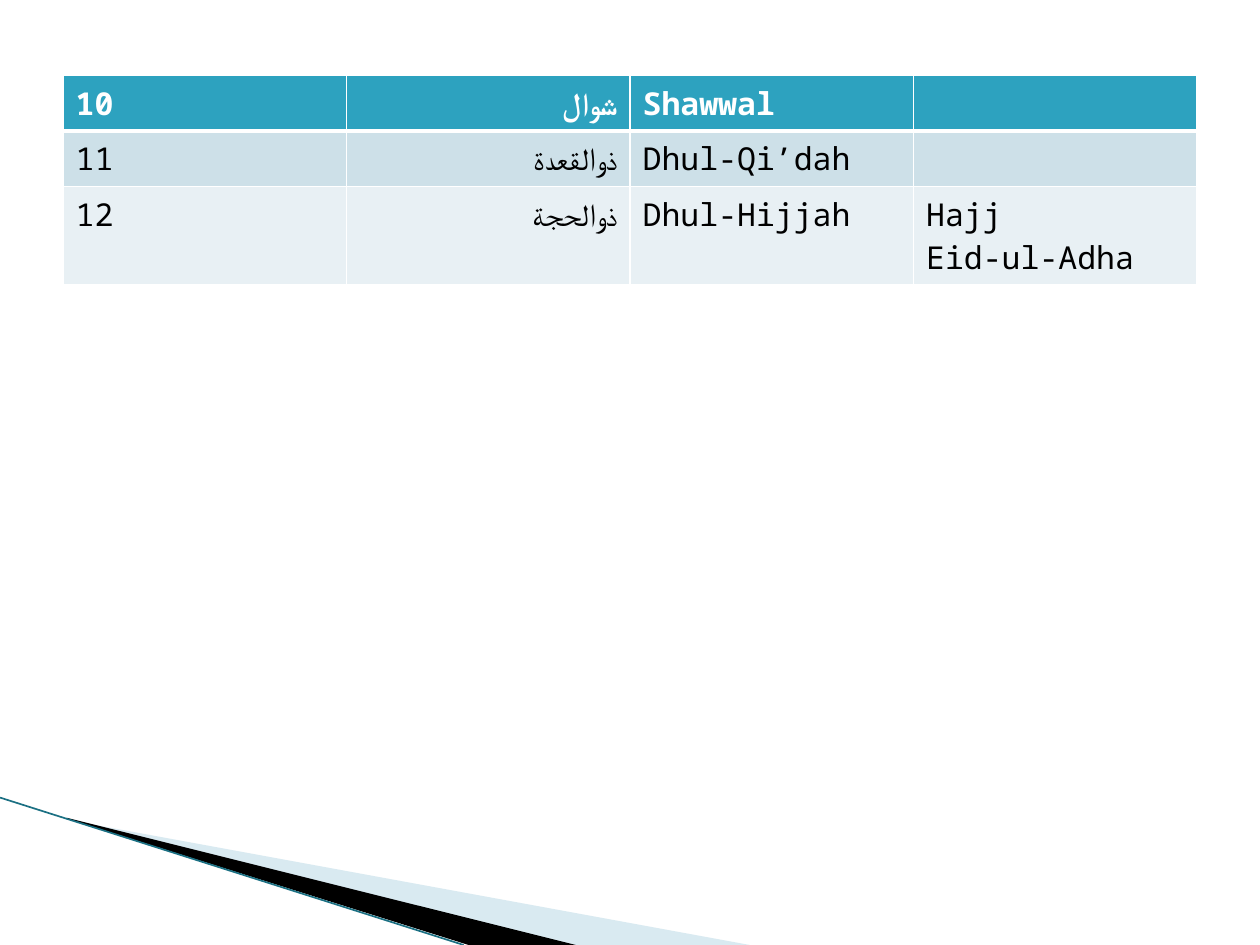
from dataclasses import dataclass

from pptx import Presentation, util as u
from pptx.dml.color import RGBColor
from pptx.enum import shapes, text
from pptx.oxml.ns import qn
from lxml import etree


@dataclass(frozen=True)
class Theme:
    font: str = "Noto Sans Mono"
    size: int = 18
    head: str = "2DA2BF"
    bands: tuple = ("CDE0E8", "E8F0F4")
    white: str = "FFFFFF"
    black: str = "000000"
    pale: str = "A0CBDC"
    edge: str = "1B7083"


T = Theme()
WIDE, HIGH = 10, 7.5
MONTHS = [
    ("10", "شوال", "Shawwal", ""),
    ("11", "ذوالقعدة", "Dhul-Qi’dah", ""),
    ("12", "ذوالحجة", "Dhul-Hijjah", "Hajj\nEid-ul-Adha"),
]
ARABIC = 1
WEDGES = [
    ([(0.55, 6.51), (5.95, 7.5), (4.56, 7.5), (0.55, 6.5)], T.pale, 40),
    ([(0.53, 6.49), (4.57, 7.5), (3.72, 7.5), (0.54, 6.5)], T.black, 100),
]
SLOPE = (0, 6.33, 3.68, 7.5)


def rgb(code):
    return RGBColor.from_string(code)


def add_wedge(slide, points, color, alpha):
    first, *rest = [(u.Inches(x), u.Inches(y)) for x, y in points]
    build = slide.shapes.build_freeform(*first)
    build.add_line_segments(rest, close=True)
    wedge = build.convert_to_shape()
    wedge.shadow.inherit = False
    wedge.line.fill.background()
    wedge.fill.solid()
    wedge.fill.fore_color.rgb = rgb(color)
    if alpha < 100:
        tint = wedge._element.spPr.find(".//" + qn("a:srgbClr"))
        etree.SubElement(tint, qn("a:alpha"), val=str(alpha * 1000))


def add_slope(slide):
    line = slide.shapes.add_connector(
        shapes.MSO_CONNECTOR.STRAIGHT, *map(u.Inches, SLOPE))
    line.line.color.rgb = rgb(T.edge)
    line.line.width = u.Pt(0.95)
    etree.SubElement(line._element.spPr, qn("a:effectLst"))


def set_edges(cell, base):
    props = cell._tc.get_or_add_tcPr()
    for side, width in zip("LRTB", (1, 1, 1, base)):
        edge = etree.SubElement(props, qn("a:ln" + side), w=str(u.Pt(width)))
        fill = etree.SubElement(edge, qn("a:solidFill"))
        etree.SubElement(fill, qn("a:srgbClr"), val=T.white)


def set_cell(cell, words, row, col):
    head = row == 0
    set_edges(cell, 3 if head else 1)
    cell.fill.solid()
    cell.fill.fore_color.rgb = rgb(T.head if head else T.bands[(row - 1) % 2])
    cell.text_frame.text = words
    for para in cell.text_frame.paragraphs:
        if col == ARABIC:
            para.alignment = text.PP_ALIGN.RIGHT
            para._p.get_or_add_pPr().set("rtl", "1")
        for run in para.runs:
            run.font.name = T.font
            run.font.size = u.Pt(T.size)
            run.font.bold = head
            run.font.color.rgb = rgb(T.white if head else T.black)
            etree.SubElement(run._r.get_or_add_rPr(), qn("a:cs"), typeface=T.font)


def add_months(slide):
    rows, cols = len(MONTHS), len(MONTHS[0])
    frame = slide.shapes.add_table(
        rows, cols, u.Inches(WIDE * 0.05), u.Inches(HIGH * 0.08),
        u.Inches(WIDE * 0.9), u.Inches(0.41 * rows))
    for row, month in enumerate(MONTHS):
        for col, words in enumerate(month):
            set_cell(frame.table.cell(row, col), words, row, col)


def main():
    deck = Presentation()
    deck.slide_width, deck.slide_height = u.Inches(WIDE), u.Inches(HIGH)
    slide = deck.slides.add_slide(deck.slide_layouts[6])
    for wedge in WEDGES:
        add_wedge(slide, *wedge)
    add_slope(slide)
    add_months(slide)
    deck.save("out.pptx")


if __name__ == "__main__":
    main()
